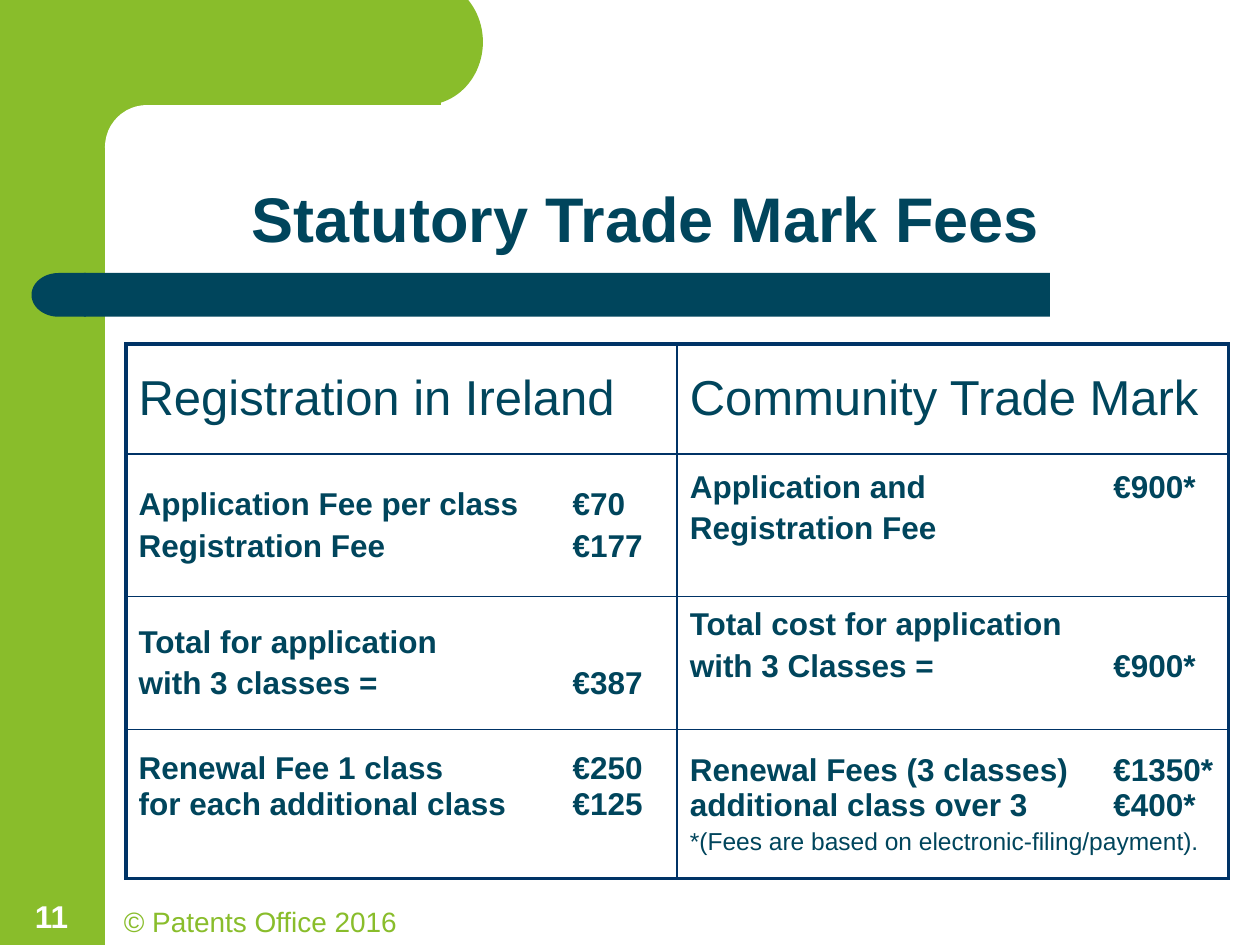
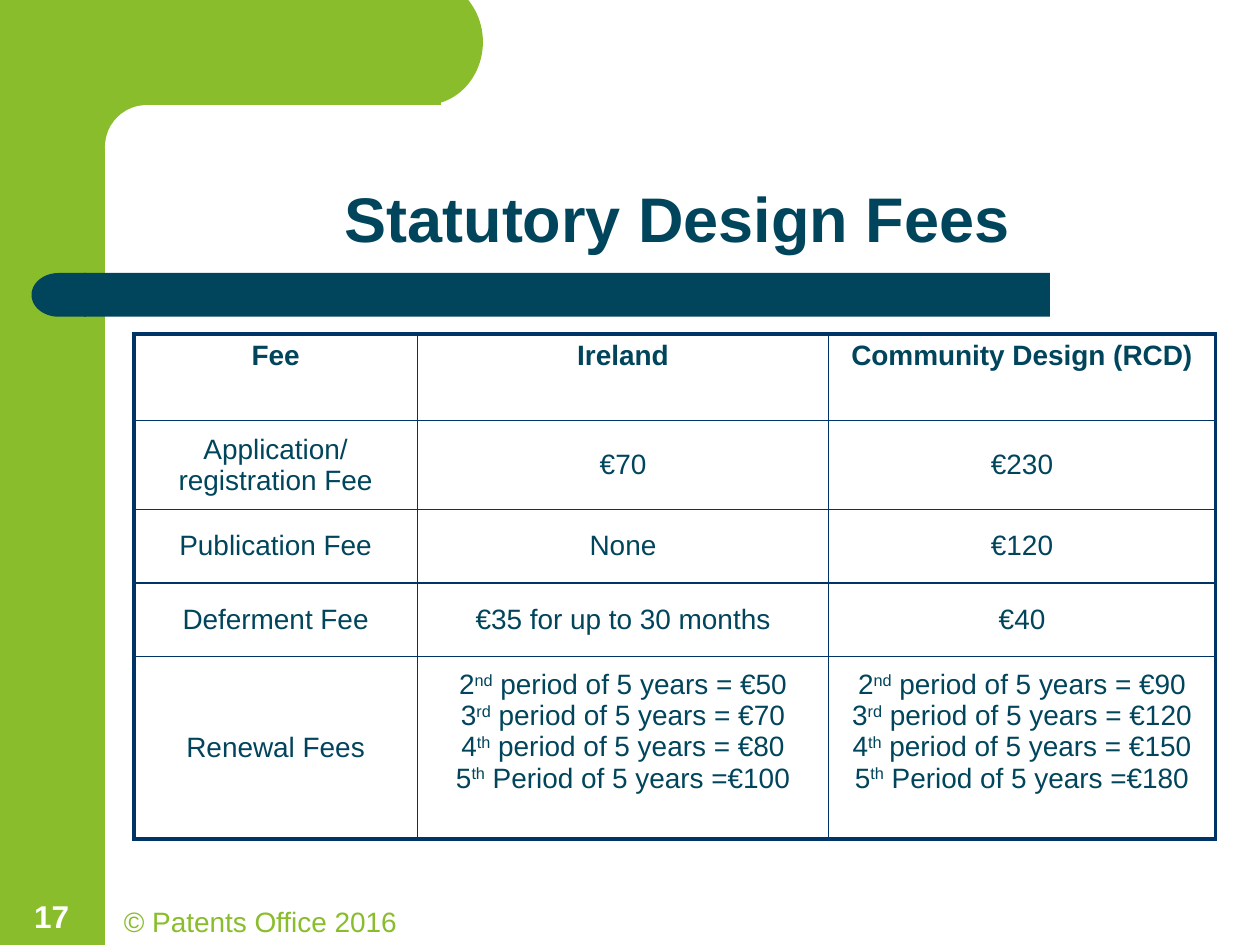
from dataclasses import dataclass, field

from lxml.etree import SubElement
from pptx import Presentation
from pptx.dml.color import RGBColor
from pptx.enum.shapes import MSO_SHAPE
from pptx.enum.text import MSO_ANCHOR, MSO_AUTO_SIZE, PP_ALIGN
from pptx.oxml import parse_xml
from pptx.oxml.ns import nsdecls, qn
from pptx.util import Pt


@dataclass(frozen=True)
class Theme:
    font: str = "Arial"
    green: str = "89BD2B"
    teal: str = "00455C"
    white: str = "FFFFFF"
    border: str = "003366"
    title: int = 36
    heading: int = 28
    body: int = 18
    small: int = 16
    note: int = 14
    outer_line: float = 2.25
    inner_line: float = 1


@dataclass
class Cell:
    """Paragraphs of one table cell; lift is extra space below the text."""
    lines: list
    fmt: dict = field(default_factory=dict)
    lift: float = 0
    anchor: MSO_ANCHOR = MSO_ANCHOR.MIDDLE


class Deck:
    def __init__(self, theme):
        self.theme = theme
        self.prs = Presentation()
        self.prs.slide_width, self.prs.slide_height = Pt(720), Pt(540)
        self.slide = None

    def shape(self, kind, box, color):
        s = self.slide.shapes.add_shape(kind, *map(Pt, box))
        s.shadow.inherit = False
        s.fill.solid()
        s.fill.fore_color.rgb = RGBColor.from_string(color)
        s.line.fill.background()
        return s

    def paragraph(self, p, text, size, color=None, bold=False, align=PP_ALIGN.LEFT,
                  before=0, spacing=1.0, tab=None):
        """Write text; a newline breaks the line, ^ marks encloses superscript."""
        layout = {"alignment": align, "space_before": Pt(before), "line_spacing": spacing}
        for name, value in layout.items():
            setattr(p, name, value)
        if tab:
            tabs = SubElement(p._p.get_or_add_pPr(), qn("a:tabLst"))
            SubElement(tabs, qn("a:tab"), pos=str(Pt(tab)), algn="l")
        style = {"name": self.theme.font, "size": Pt(size), "bold": bold}
        for i, line in enumerate(text.split("\n")):
            if i:
                p.add_line_break()
            for j, part in enumerate(line.split("^")):
                r = p.add_run()
                r.text = part
                for name, value in style.items():
                    setattr(r.font, name, value)
                r.font.color.rgb = RGBColor.from_string(color or self.theme.teal)
                if j % 2:
                    r._r.get_or_add_rPr().set("baseline", "30000")

    def text(self, box, text, **fmt):
        tf = self.slide.shapes.add_textbox(*map(Pt, box)).text_frame
        tf.word_wrap = True
        tf.vertical_anchor = MSO_ANCHOR.BOTTOM
        self.paragraph(tf.paragraphs[0], text, **fmt)

    def title(self, box, text):
        s = self.slide.shapes.title
        s.left, s.top, s.width, s.height = map(Pt, box)
        tf = s.text_frame
        tf.auto_size = MSO_AUTO_SIZE.NONE
        tf.vertical_anchor = MSO_ANCHOR.BOTTOM
        self.paragraph(tf.paragraphs[0], text, self.theme.title, bold=True,
                       align=PP_ALIGN.CENTER, spacing=0.9)
        # Bring the title in front of the frame
        s._element.getparent().append(s._element)

    def new_slide(self, title, title_box, number):
        t = self.theme
        self.slide = self.prs.slides.add_slide(self.prs.slide_layouts[5])
        # Green corner with rounded inside and outside
        self.shape(MSO_SHAPE.RECTANGLE, (0, 0, 60, 540), t.green)
        self.shape(MSO_SHAPE.RECTANGLE, (54, 0, 198, 84), t.green)
        inner = self.shape(MSO_SHAPE.ROUNDED_RECTANGLE, (60, 60, 402, 48), t.white)
        inner.adjustments[0] = 0.5
        self.shape(MSO_SHAPE.OVAL, (210, -12, 66, 72), t.green)
        # Title bar with round left end
        self.shape(MSO_SHAPE.RECTANGLE, (48, 156, 552, 25), t.teal)
        cap = self.shape(MSO_SHAPE.FLOWCHART_DELAY, (18, 156, 31, 25), t.teal)
        cap.rotation = 180
        # Footer and slide number
        self.text((18, 513.2, 216, 26.6), "© Patents Office 2016", size=t.small,
                  color=t.green, align=PP_ALIGN.RIGHT)
        self.text((6.5, 509, 46, 29), number, size=t.body, color=t.white, bold=True,
                  align=PP_ALIGN.CENTER)
        self.title(title_box, title)

    def borders(self, cell, outer):
        """Draw the four cell borders, thick where the side is an outer edge."""
        tcPr = cell._tc.get_or_add_tcPr()
        for i, side in enumerate("LRTB"):
            width = self.theme.outer_line if outer[side] else self.theme.inner_line
            tcPr.insert(i, parse_xml(
                f'<a:ln{side} {nsdecls("a")} w="{Pt(width)}"><a:solidFill>'
                f'<a:srgbClr val="{self.theme.border}"/></a:solidFill></a:ln{side}>'))

    def table(self, left, top, widths, heights, rows):
        frame = self.slide.shapes.add_table(len(heights), len(widths), Pt(left), Pt(top),
                                            Pt(sum(widths)), Pt(sum(heights)))
        tbl = frame.table
        tbl.first_row = tbl.horz_banding = False
        for col, width in zip(tbl.columns, widths):
            col.width = Pt(width)
        for row, height in zip(tbl.rows, heights):
            row.height = Pt(height)
        for i, row in enumerate(rows):
            for j, content in enumerate(row):
                cell = tbl.cell(i, j)
                cell.fill.background()
                self.borders(cell, {"L": j == 0, "R": j == len(widths) - 1,
                                    "T": i == 0, "B": i == len(heights) - 1})
                cell.vertical_anchor = content.anchor
                cell.margin_bottom = Pt(3.6 + content.lift)
                tf = cell.text_frame
                for k, line in enumerate(content.lines):
                    p = tf.add_paragraph() if k else tf.paragraphs[0]
                    text, extra = line if isinstance(line, tuple) else (line, {})
                    fmt = {**content.fmt, **extra}
                    if k == 0:
                        fmt["before"] = 0
                    self.paragraph(p, text, **fmt)


def trade_mark_slide(deck):
    t = deck.theme
    deck.new_slide("Statutory Trade Mark Fees", (72, 77, 594, 73), "11")
    heading = {"size": t.heading}
    ireland = {"size": t.body, "bold": True, "before": 3.6, "tab": 248}
    community = {**ireland, "tab": 242}
    note = {"size": t.note, "bold": False, "before": 2.8}
    deck.table(72, 196.5, [315, 315], [63, 81.5, 76, 85], [
        [Cell(["Registration in Ireland"], heading),
         Cell(["Community Trade Mark"], heading)],
        [Cell(["Application Fee per class\t€70", "Registration Fee\t€177"], ireland),
         Cell(["Application and\t€900*", "Registration Fee"], community, lift=20)],
        [Cell(["Total for application", "with 3 classes =\t€387"], ireland),
         Cell(["Total cost for application", "with 3 Classes =\t€900*"], community, lift=20)],
        [Cell(["Renewal Fee 1 class\t€250\nfor each additional class\t€125"], ireland, lift=20),
         Cell(["Renewal Fees (3 classes)\t€1350*\nadditional class over 3\t€400*",
               ("*(Fees are based on electronic-filing/payment).", note)], community)],
    ])


def renewal_lines(fees):
    periods = ["2^nd^ period of 5 years = ", "3^rd^ period of 5 years = ",
               "4^th^ period of 5 years = ", "5^th^ Period of 5 years ="]
    return [f"{period}€{fee}" for period, fee in zip(periods, fees)]


def design_slide(deck):
    t = deck.theme
    deck.new_slide("Statutory Design Fees", (72, 60, 630, 90), "17")
    body = {"size": t.small, "align": PP_ALIGN.CENTER}
    header = {**body, "bold": True}
    fees = [
        (["Application/", "registration Fee"], "€70", "€230"),
        (["Publication Fee"], "None", "€120"),
        (["Deferment Fee"], "€35 for up to 30 months", "€40"),
    ]
    rows = [[Cell([name], header, anchor=MSO_ANCHOR.TOP)
             for name in ("Fee", "Ireland", "Community Design (RCD)")]]
    rows += [[Cell(name, body), Cell([ireland], body), Cell([community], body)]
             for name, ireland, community in fees]
    rows.append([Cell(["Renewal Fees"], body)]
                + [Cell(renewal_lines(amounts), body, lift=18.4)
                   for amounts in ((50, 70, 80, 100), (90, 120, 150, 180))])
    deck.table(76.5, 190.8, [162, 235, 221], [49.5, 51, 41.8, 42.2, 104.2], rows)


def main():
    deck = Deck(Theme())
    trade_mark_slide(deck)
    design_slide(deck)
    deck.prs.save("out.pptx")


if __name__ == "__main__":
    main()
